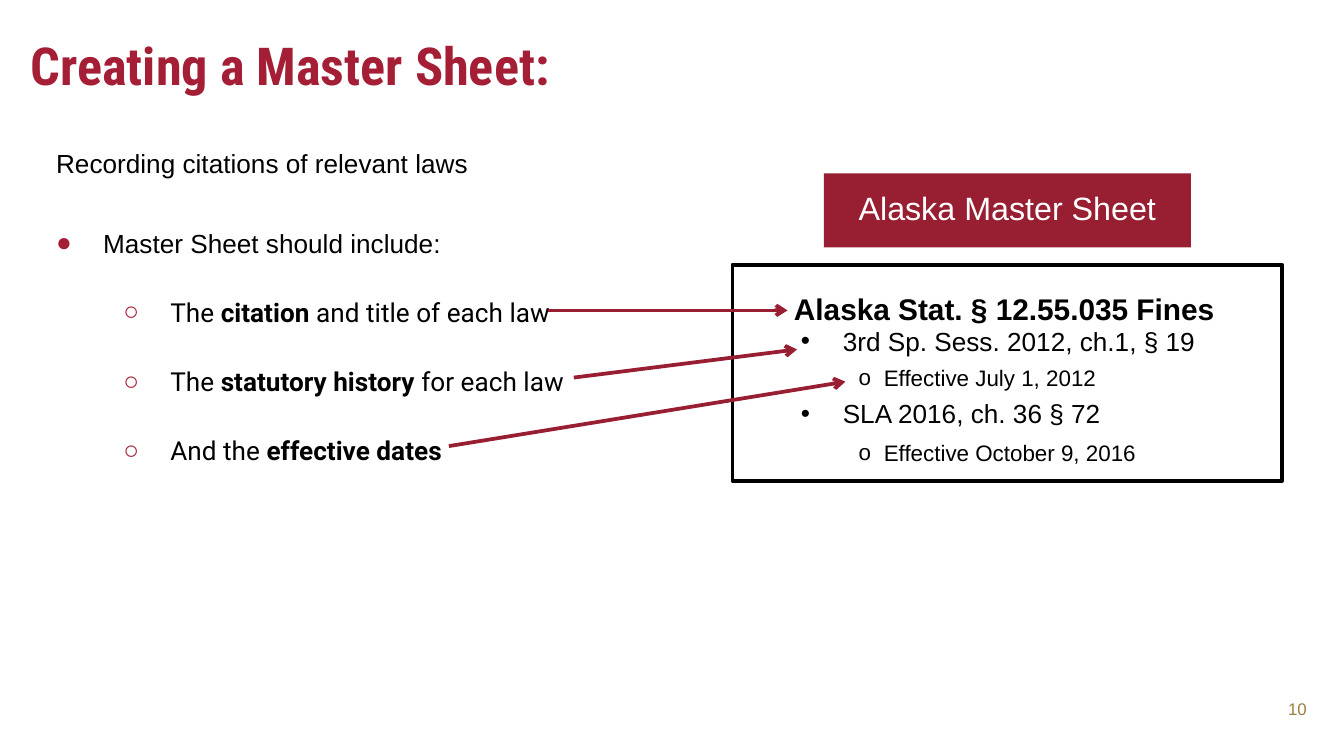
import dataclasses

import lxml.etree
import pptx
import pptx.dml.color
import pptx.enum.shapes
import pptx.enum.text
import pptx.oxml.ns
import pptx.util

Pt = pptx.util.Pt
Align = pptx.enum.text.PP_ALIGN
Anchor = pptx.enum.text.MSO_ANCHOR
qn = pptx.oxml.ns.qn


@dataclasses.dataclass(frozen=True)
class Theme:
    heading: str = "A41E35"
    crimson: str = "981E32"
    gold: str = "9A7E40"
    black: str = "000000"
    white: str = "FFFFFF"
    sans: str = "Arial"
    body: str = "Roboto"
    condensed: str = "Roboto Condensed"
    title_size: float = 28
    label_size: float = 17.3
    law_size: float = 16
    text_size: float = 14
    date_size: float = 12
    number_size: float = 9


THEME = Theme()


def rgb(color):
    return pptx.dml.color.RGBColor.from_string(color)


def add_bullet(para, char, color):
    properties = para._p.get_or_add_pPr()
    holder = lxml.etree.SubElement(properties, qn("a:buClr"))
    lxml.etree.SubElement(holder, qn("a:srgbClr"), val=color)
    lxml.etree.SubElement(properties, qn("a:buFont"), typeface=THEME.sans)
    lxml.etree.SubElement(properties, qn("a:buChar"), char=char)


def write(frame, text, *, size=THEME.text_size, font=THEME.sans, color=THEME.black,
          bold=False, align=Align.LEFT, level=0, indent=0, hang=0, spacing=1,
          before=0, bullet=None, bullet_color=THEME.black):
    """Write one paragraph; parts of the text between asterisks turn bold."""
    para = frame.paragraphs[0]
    if para.runs:
        para = frame.add_paragraph()
    para.alignment, para.level = align, level
    para.line_spacing, para.space_before = float(spacing), Pt(before)
    properties = para._p.get_or_add_pPr()
    properties.set("marL", str(Pt(indent)))
    properties.set("indent", str(Pt(-hang)))
    if bullet:
        add_bullet(para, bullet, bullet_color)
    for index, part in enumerate(text.split("*")):
        if part:
            span = para.add_run()
            span.text = part
            span.font.size, span.font.name = Pt(size), font
            span.font.bold = bold or index % 2 == 1
            span.font.color.rgb = rgb(color)


class SlideBuilder:
    def __init__(self, deck, theme):
        self.theme = theme
        self.page = deck.slides.add_slide(deck.slide_layouts[6])

    def text_box(self, left, top, width, height, inset=7.2, anchor=Anchor.TOP):
        box = self.page.shapes.add_textbox(Pt(left), Pt(top), Pt(width), Pt(height))
        frame = box.text_frame
        frame.word_wrap, frame.vertical_anchor = True, anchor
        frame.margin_left = frame.margin_right = Pt(7.2)
        frame.margin_top = frame.margin_bottom = Pt(inset)
        return frame

    def note(self, text, left, top, width, height, **style):
        """Add a single line that never wraps."""
        frame = self.text_box(left, top, width, height, inset=3.6)
        frame.word_wrap = False
        frame.auto_size = pptx.enum.text.MSO_AUTO_SIZE.SHAPE_TO_FIT_TEXT
        write(frame, text, **style)

    def rectangle(self, left, top, width, height, fill=None, line=None):
        box = self.page.shapes.add_shape(
            pptx.enum.shapes.MSO_SHAPE.RECTANGLE,
            Pt(left), Pt(top), Pt(width), Pt(height))
        box.shadow.inherit = False
        if fill:
            box.fill.solid()
            box.fill.fore_color.rgb = rgb(fill)
        else:
            box.fill.background()
        if line:
            box.line.color.rgb, box.line.width = rgb(line), Pt(2)
        else:
            box.line.fill.background()
        return box

    def arrow(self, start_x, start_y, end_x, end_y):
        arrow = self.page.shapes.add_connector(
            pptx.enum.shapes.MSO_CONNECTOR.STRAIGHT,
            Pt(start_x), Pt(start_y), Pt(end_x), Pt(end_y))
        arrow.line.color.rgb, arrow.line.width = rgb(self.theme.crimson), Pt(2)
        lxml.etree.SubElement(arrow.get_or_add_ln(), qn("a:tailEnd"), type="arrow")
        lxml.etree.SubElement(arrow._element.spPr, qn("a:effectLst"))


def main():
    deck = pptx.Presentation()
    deck.slide_width, deck.slide_height = Pt(720), Pt(405)
    slide = SlideBuilder(deck, THEME)

    number = slide.text_box(675.4, 366.5, 31.7, 26.6, anchor=Anchor.MIDDLE)
    write(number, "10", size=THEME.number_size, color=THEME.gold, align=Align.RIGHT)
    title = slide.text_box(9.4, 10.8, 659.5, 45.4)
    write(title, "Creating a Master Sheet:", size=THEME.title_size,
          font=THEME.condensed, color=THEME.heading, bold=True)

    body = slide.text_box(12.2, 67.7, 314.6, 289.4)
    write(body, "Recording citations of relevant laws", indent=10.8, spacing=1.25)
    listed = dict(hang=25.2, spacing=1.25, bullet_color=THEME.heading)
    write(body, "Master Sheet should include:", indent=36, before=21.6, bullet="●", **listed)
    for item in ("The *citation* and title of each law",
                 "The *statutory history* for each law",
                 "And the *effective dates*"):
        write(body, item, font=THEME.body, level=1, indent=72, before=16, bullet="○", **listed)

    slide.rectangle(392.4, 141.8, 294.5, 115.9, line=THEME.black)
    label = slide.rectangle(441.4, 92.9, 196.6, 39.6, fill=THEME.crimson).text_frame
    label.vertical_anchor = Anchor.MIDDLE
    write(label, "Alaska Master Sheet", size=THEME.label_size, color=THEME.white,
          align=Align.CENTER, spacing=0.9)

    slide.note("Alaska Stat. § 12.55.035 Fines", 409.7, 151.9, 252, 43.9,
               size=THEME.law_size, bold=True, indent=8.6)
    for text, top, width in (("3rd Sp. Sess. 2012, ch.1, § 19", 170.6, 226.8),
                             ("SLA 2016, ch. 36 § 72", 209.5, 180.7)):
        slide.note(text, 421.9, top, width, 24.5, indent=22.5, hang=22.5, bullet="•")
    for text, top, width in (("Effective July 1, 2012", 191.5, 143.3),
                             ("Effective October 9, 2016", 231.8, 164.9)):
        slide.note(text, 452.9, top, width, 21.6, size=THEME.date_size,
                   level=4, indent=13.5, hang=13.5, bullet="o")

    for ends in ((240.5, 239, 452.9, 204.5),
                 (307.4, 202.3, 427, 187.2),
                 (293.8, 166.3, 421.9, 166.3)):
        slide.arrow(*ends)

    deck.save("out.pptx")


if __name__ == "__main__":
    main()
